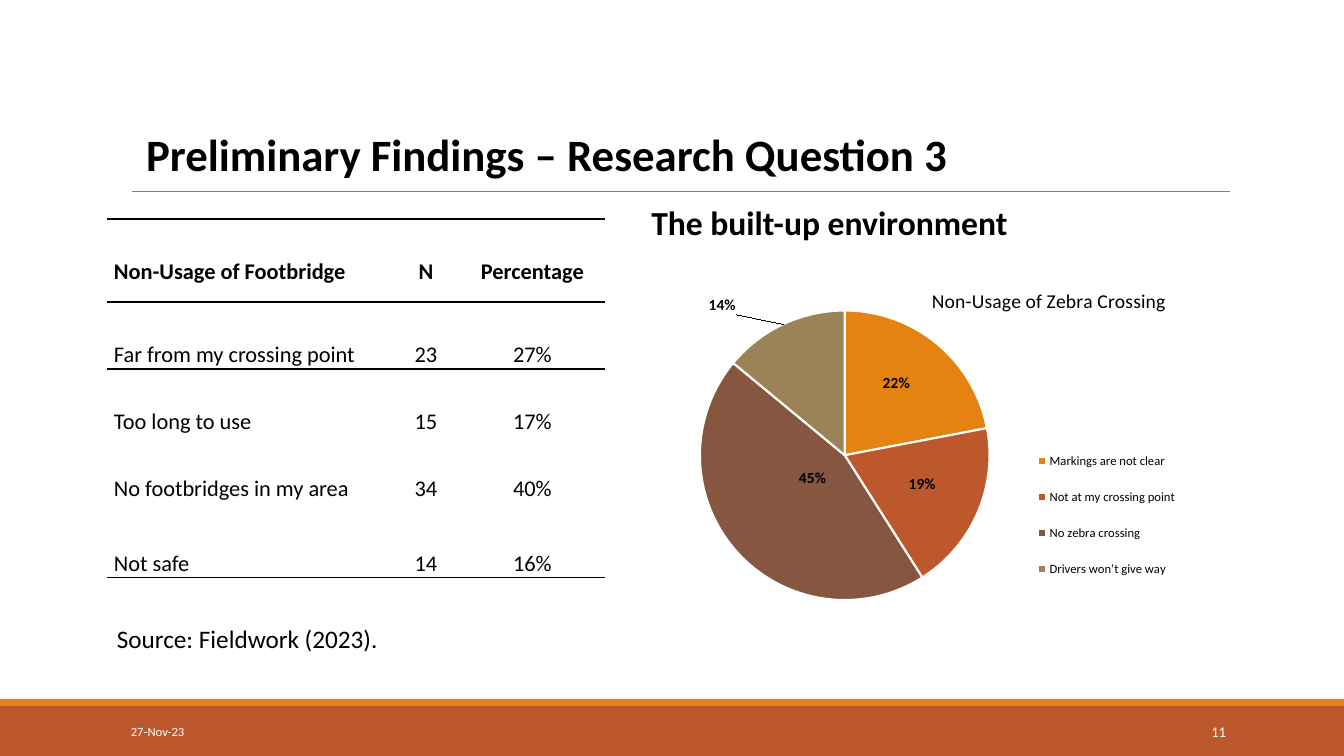
from dataclasses import dataclass

from lxml.etree import SubElement
from pptx import Presentation
from pptx.chart.data import CategoryChartData
from pptx.dml.color import RGBColor
from pptx.enum.chart import XL_CHART_TYPE as ChartType
from pptx.enum.chart import XL_LABEL_POSITION as LabelPosition
from pptx.enum.chart import XL_LEGEND_POSITION as LegendPosition
from pptx.enum.shapes import MSO_CONNECTOR as Connector
from pptx.enum.shapes import MSO_SHAPE as Shape
from pptx.enum.text import MSO_ANCHOR as Anchor
from pptx.enum.text import PP_ALIGN as Align
from pptx.oxml.ns import qn
from pptx.oxml.xmlchemy import OxmlElement
from pptx.util import Emu, Pt

SLIDE_WIDTH, SLIDE_HEIGHT = 1344, 756
EMU_PER_PX = 12192000 / SLIDE_WIDTH
PLAIN_TABLE = "{2D5ABB26-0587-4C30-8999-92F81FD0307C}"


@dataclass(frozen=True)
class Theme:
    font: str = "Calibri"
    ink: str = "000000"
    paper: str = "FFFFFF"
    rule: str = "808080"
    rust: str = "BD582C"
    orange: str = "E48312"
    brown: str = "865640"
    olive: str = "9B8357"
    title: float = 32
    heading: float = 24
    source: float = 18
    table: float = 16
    chart_title: float = 14
    label: float = 11
    number: float = 10.5
    chart: float = 10
    small: float = 9


def px(value):
    return Emu(round(value * EMU_PER_PX))


def box(*lengths):
    return [px(length) for length in lengths]


def set_layout(parent, after, **values):
    for old in parent.findall(qn("c:layout")):
        parent.remove(old)
    layout = OxmlElement("c:layout")
    manual = SubElement(layout, qn("c:manualLayout"))
    for name, value in values.items():
        SubElement(manual, qn(f"c:{name}")).set("val", str(value))
    if after is None:
        parent.insert(0, layout)
    else:
        parent.find(qn(after)).addnext(layout)


class SlideBuilder:
    def __init__(self, slide, theme):
        self.slide = slide
        self.shapes = slide.shapes
        self.theme = theme

    def style_font(self, font, size, color=None, bold=False):
        font.name = self.theme.font
        font.size = Pt(size)
        font.bold = bold
        font.color.rgb = RGBColor.from_string(color or self.theme.ink)

    def set_text(self, frame, text, size, color=None, bold=False, align=Align.LEFT):
        frame.text = text
        paragraph = frame.paragraphs[0]
        paragraph.alignment = align
        for run in paragraph.runs:
            self.style_font(run.font, size, color, bold)

    def title(self, text, area):
        shape = self.shapes.title
        shape.left, shape.top, shape.width, shape.height = box(*area)
        self.set_text(shape.text_frame, text, self.theme.title, bold=True)

    def text(self, text, area, size, anchor=Anchor.TOP, **style):
        frame = self.shapes.add_textbox(*box(*area)).text_frame
        frame.word_wrap = True
        frame.vertical_anchor = anchor
        self.set_text(frame, text, size, **style)

    def band(self, area, color):
        shape = self.shapes.add_shape(Shape.RECTANGLE, *box(*area))
        shape.shadow.inherit = False
        shape.fill.solid()
        shape.fill.fore_color.rgb = RGBColor.from_string(color)
        shape.line.fill.background()

    def rule(self, start, end):
        line = self.shapes.add_connector(Connector.STRAIGHT, *box(*start, *end))
        line.line.color.rgb = RGBColor.from_string(self.theme.rule)
        line.line.width = Pt(0.5)
        SubElement(line.element.spPr, qn("a:effectLst"))

    def cell_border(self, properties, side):
        line = OxmlElement(f"a:{side}")
        line.set("w", str(Pt(1)))
        fill = SubElement(line, qn("a:solidFill"))
        SubElement(fill, qn("a:srgbClr")).set("val", self.theme.ink)
        properties.find(qn("a:noFill")).addprevious(line)

    def table(self, rows, origin, widths, heights):
        area = (*origin, sum(widths), sum(heights))
        shape = self.shapes.add_table(len(rows), len(widths), *box(*area))
        table = shape.table
        table.first_row = table.horz_banding = False
        for style in shape.element.iter(qn("a:tableStyleId")):
            style.text = PLAIN_TABLE
        for column, width in zip(table.columns, widths):
            column.width = px(width)
        for index, (values, height) in enumerate(zip(rows, heights)):
            table.rows[index].height = px(height)
            for position, value in enumerate(values):
                cell = table.cell(index, position)
                cell.fill.background()
                cell.margin_left = cell.margin_right = px(7)
                cell.margin_top, cell.margin_bottom = px(39), 0
                align = Align.CENTER if position else Align.LEFT
                self.set_text(cell.text_frame, value, self.theme.table,
                              bold=index == 0, align=align)
        for number, properties in enumerate(shape.element.iter(qn("a:tcPr"))):
            index = number // len(widths)
            if index < 2:
                self.cell_border(properties, "lnT")
            if index in (0, len(rows) - 1):
                self.cell_border(properties, "lnB")

    def pie(self, title, slices, area):
        data = CategoryChartData(number_format="0%")
        data.categories = [name for name, *_ in slices]
        data.add_series("Series 1", [value for _, value, *_ in slices])
        chart = self.shapes.add_chart(ChartType.PIE, *box(*area), data).chart
        self.style_font(chart.font, self.theme.chart)
        chart.has_title = True
        self.set_text(chart.chart_title.text_frame, title, self.theme.chart_title)
        chart.has_legend = True
        chart.legend.position = LegendPosition.BOTTOM
        chart.legend.include_in_layout = False
        self.style_font(chart.legend.font, self.theme.small)

        plot = chart.plots[0]
        plot.vary_by_categories = True
        series = plot.series[0]
        labels = series.data_labels
        labels.show_value = True
        labels.number_format = "0%"
        labels.number_format_is_linked = False
        self.style_font(labels.font, self.theme.label, bold=True)
        for index, (_, _, color, position, _) in enumerate(slices):
            point = series.points[index]
            point.format.fill.solid()
            point.format.fill.fore_color.rgb = RGBColor.from_string(color)
            point.format.line.color.rgb = RGBColor.from_string(self.theme.paper)
            point.format.line.width = Pt(1.5)
            self.style_font(point.data_label.font, self.theme.label, bold=True)
            point.data_label.position = position

        for label, (*_, (across, down)) in zip(chart.element.iter(qn("c:dLbl")), slices):
            set_layout(label, "c:idx", x=round(across / area[2], 2),
                       y=round(down / area[3], 2))
        root = chart.element.find(qn("c:chart"))
        edges = {"xMode": "edge", "yMode": "edge"}
        set_layout(root.find(qn("c:title")), "c:tx", **edges, x=0.48, y=0.15)
        set_layout(root.find(qn("c:plotArea")), None, layoutTarget="inner", **edges,
                   x=0.07, y=0.15, w=0.52, h=0.83)
        set_layout(root.find(qn("c:legend")), "c:legendPos", **edges,
                   x=0.65, y=0.51, w=0.3, h=0.4)


def main():
    theme = Theme()
    presentation = Presentation()
    presentation.slide_width, presentation.slide_height = box(SLIDE_WIDTH, SLIDE_HEIGHT)
    slide = presentation.slides.add_slide(presentation.slide_layouts[5])
    builder = SlideBuilder(slide, theme)

    builder.band((0, 706, SLIDE_WIDTH, 50), theme.rust)
    builder.band((0, 699, SLIDE_WIDTH, 7), theme.orange)
    builder.rule((132, 191), (1230, 191))
    builder.title("Preliminary Findings – Research Question 3", (136, 121, 933, 65))
    builder.text("27-Nov-23", (121, 712, 272, 40), theme.small, Anchor.MIDDLE,
                 color=theme.paper)
    builder.text("11", (1092, 712, 144, 40), theme.number, Anchor.MIDDLE,
                 color=theme.paper, align=Align.RIGHT)
    builder.text("Source: Fieldwork (2023).", (107, 618, 369, 40), theme.source)
    builder.table([
        ("Non-Usage of Footbridge", "N", "Percentage"),
        ("Far from my crossing point", "23", "27%"),
        ("Too long to use", "15", "17%"),
        ("No footbridges in my area", "34", "40%"),
        ("Not safe", "14", "16%"),
    ], (107, 219), (285, 68, 145), (83, 67, 67, 75, 67))
    builder.pie("Non-Usage of Zebra Crossing", [
        ("Markings are not clear", 0.22, theme.orange, LabelPosition.CENTER, (4, -15)),
        ("Not at my crossing point", 0.19, theme.rust, LabelPosition.CENTER, (10, 0)),
        ("No zebra crossing", 0.45, theme.brown, LabelPosition.CENTER, (23, -23)),
        ("Drivers won’t give way", 0.14, theme.olive, LabelPosition.OUTSIDE_END, (-46, -4)),
    ], (661, 222, 557, 413))
    builder.text("The built-up environment", (615, 197, 429, 50), theme.heading,
                 bold=True, align=Align.CENTER)
    presentation.save("out.pptx")


if __name__ == "__main__":
    main()
